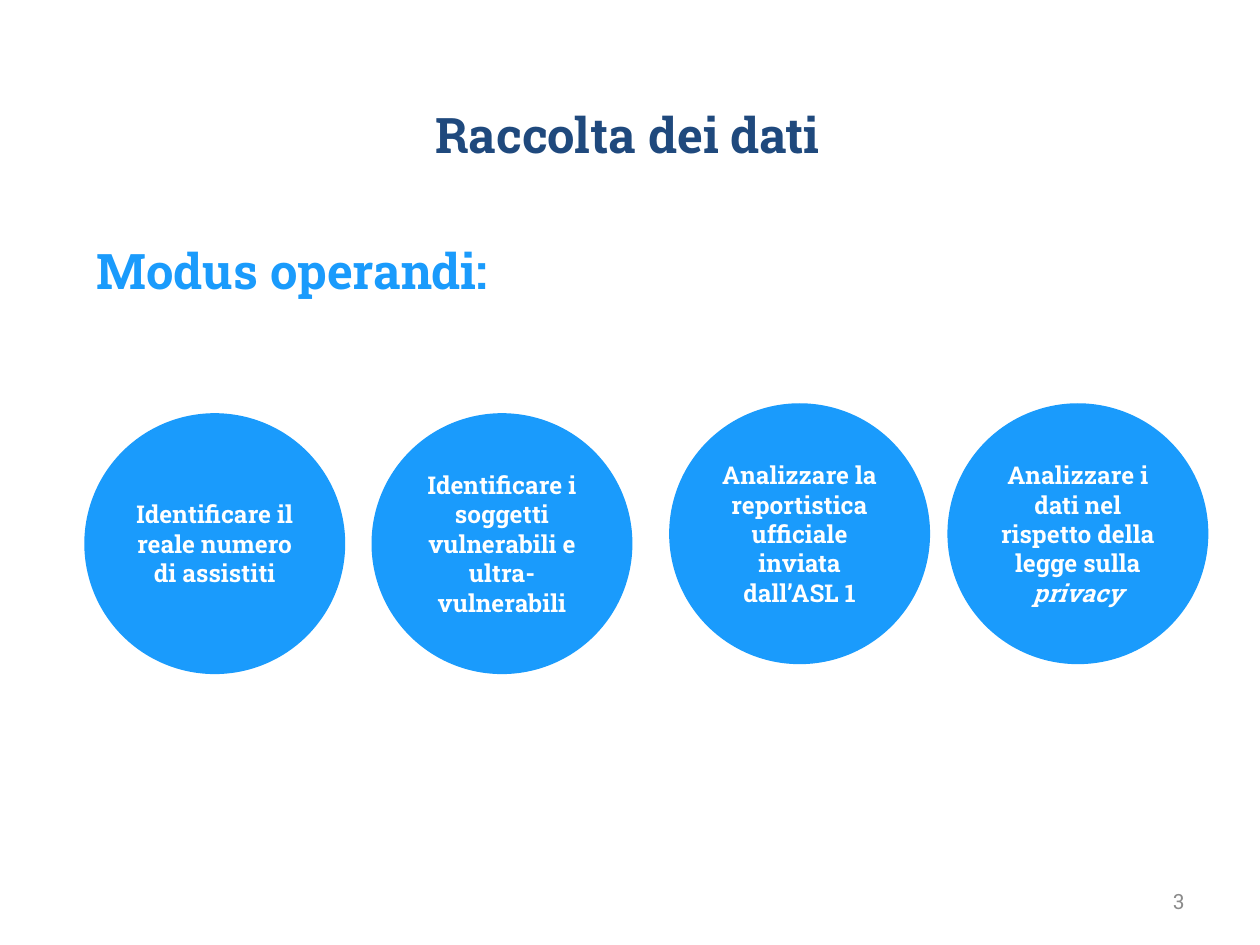
"""Build the slide on data collection with its four steps."""
from dataclasses import dataclass

from pptx import Presentation
from pptx.dml.color import RGBColor
from pptx.enum.shapes import MSO_SHAPE
from pptx.enum.text import MSO_ANCHOR, PP_ALIGN
from pptx.slide import Slide
from pptx.text.text import TextFrame
from pptx.util import Cm, Pt

OVAL = MSO_SHAPE.OVAL
TOP, MIDDLE = MSO_ANCHOR.TOP, MSO_ANCHOR.MIDDLE
LEFT, CENTER, RIGHT = PP_ALIGN.LEFT, PP_ALIGN.CENTER, PP_ALIGN.RIGHT


@dataclass(frozen=True)
class Theme:
    font: str = "Roboto Slab"
    navy: str = "1F497D"
    blue: str = "1A9BFC"
    white: str = "FFFFFF"
    gray: str = "8C8C8C"
    head: int = 28
    body: int = 14
    small: int = 12


@dataclass(frozen=True)
class Step:
    left: float
    top: float
    text: str
    slant: str = ""


THEME = Theme()
MARGIN, WIDTH, SIZE = 1.7, 21.89, 5.26
HIGH, LOW = 8.13, 8.33
STEPS = (
    Step(MARGIN, LOW, "Identificare il reale numero di assistiti"),
    Step(7.49, LOW, "Identificare i soggetti vulnerabili e ultra-vulnerabili"),
    Step(13.49, HIGH, "Analizzare la reportistica ufficiale inviata dall’ASL 1"),
    Step(19.1, HIGH, "Analizzare i dati nel rispetto della legge sulla ", "privacy"),
)


def write(frame: TextFrame, text: str, *, size: int, color: str,
          align: PP_ALIGN = CENTER, anchor: MSO_ANCHOR = MIDDLE,
          bold: bool = True, slant: str = "",
          inset: tuple[float, float] = (0.25, 0.13)) -> None:
    """Fill a frame with text, ending in an optional italic part."""
    frame.word_wrap = True
    frame.vertical_anchor = anchor
    frame.margin_left = frame.margin_right = Cm(inset[0])
    frame.margin_top = frame.margin_bottom = Cm(inset[1])
    line = frame.paragraphs[0]
    line.alignment = align
    for part, tilt in ((text, False), (slant, True)):
        if part:
            run = line.add_run()
            run.text = part
            font = run.font
            font.name, font.size = THEME.font, Pt(size)
            font.bold, font.italic = bold, tilt
            font.color.rgb = RGBColor.from_string(color)


def add_box(slide: Slide, left: float, top: float, width: float,
            height: float) -> TextFrame:
    """Add a text box and return its frame."""
    box = slide.shapes.add_textbox(Cm(left), Cm(top), Cm(width), Cm(height))
    return box.text_frame


def add_step(slide: Slide, step: Step) -> None:
    """Draw one step as a filled circle."""
    disc = slide.shapes.add_shape(
        OVAL, Cm(step.left), Cm(step.top), Cm(SIZE), Cm(SIZE))
    disc.shadow.inherit = False
    disc.fill.solid()
    disc.fill.fore_color.rgb = RGBColor.from_string(THEME.blue)
    disc.line.fill.background()
    write(disc.text_frame, step.text, slant=step.slant, size=THEME.body,
          color=THEME.white, inset=(0.18, 0.1))


def main() -> None:
    """Build and save the slide."""
    deck = Presentation()
    deck.slide_width, deck.slide_height = Cm(25.4), Cm(19.05)
    slide = deck.slides.add_slide(deck.slide_layouts[5])
    title = slide.shapes.title
    title.left, title.top = Cm(MARGIN), Cm(1.32)
    title.width, title.height = Cm(WIDTH), Cm(2.74)
    write(title.text_frame, "Raccolta dei dati",
          size=THEME.head, color=THEME.navy)
    write(add_box(slide, MARGIN, 4.72, WIDTH, 2.11), "Modus operandi:",
          size=THEME.head, color=THEME.blue, align=LEFT, anchor=TOP)
    write(add_box(slide, 18.21, 17.65, 5.92, 1.02), "3",
          size=THEME.small, color=THEME.gray, align=RIGHT, bold=False)
    for step in STEPS:
        add_step(slide, step)
    deck.save("out.pptx")


if __name__ == "__main__":
    main()
